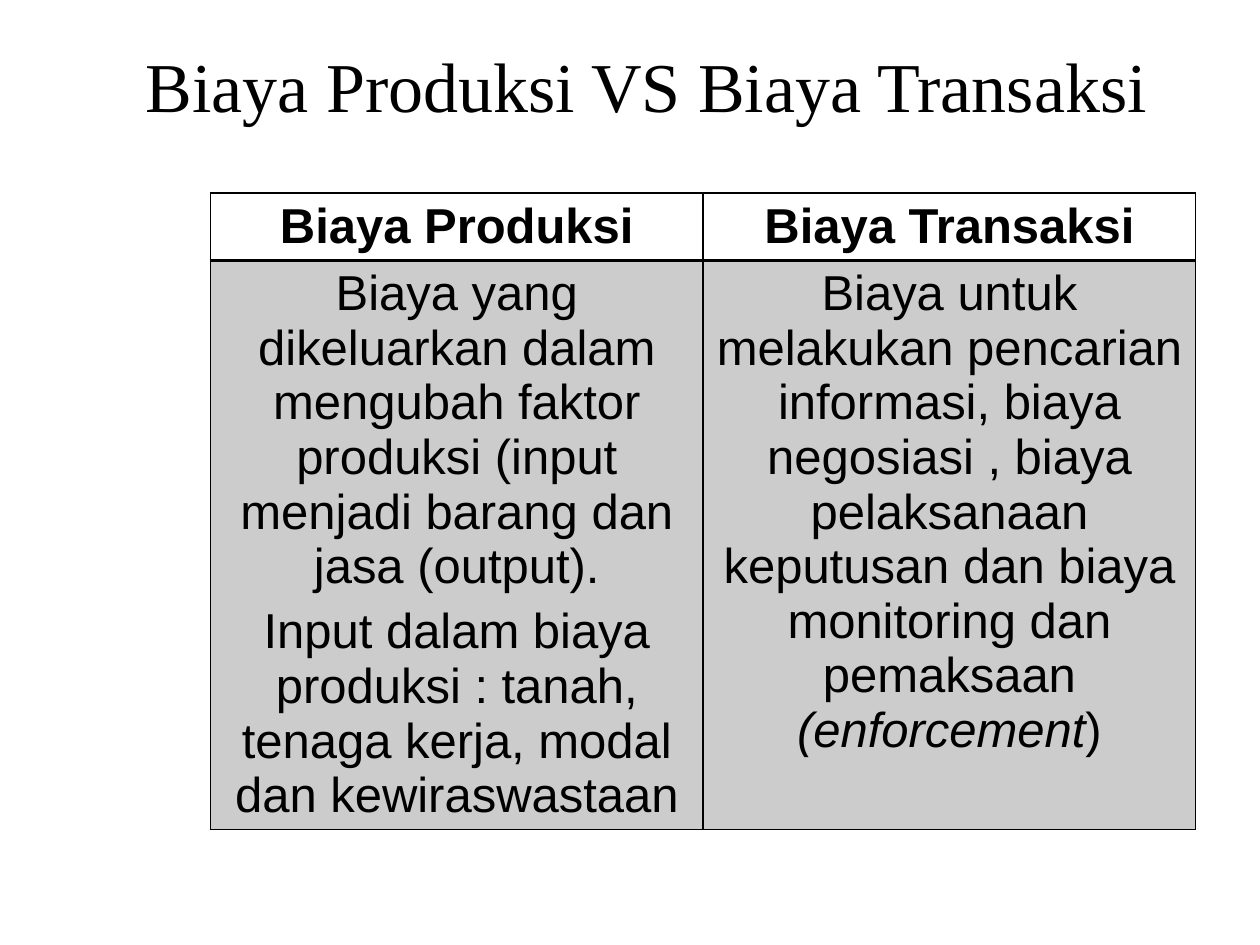
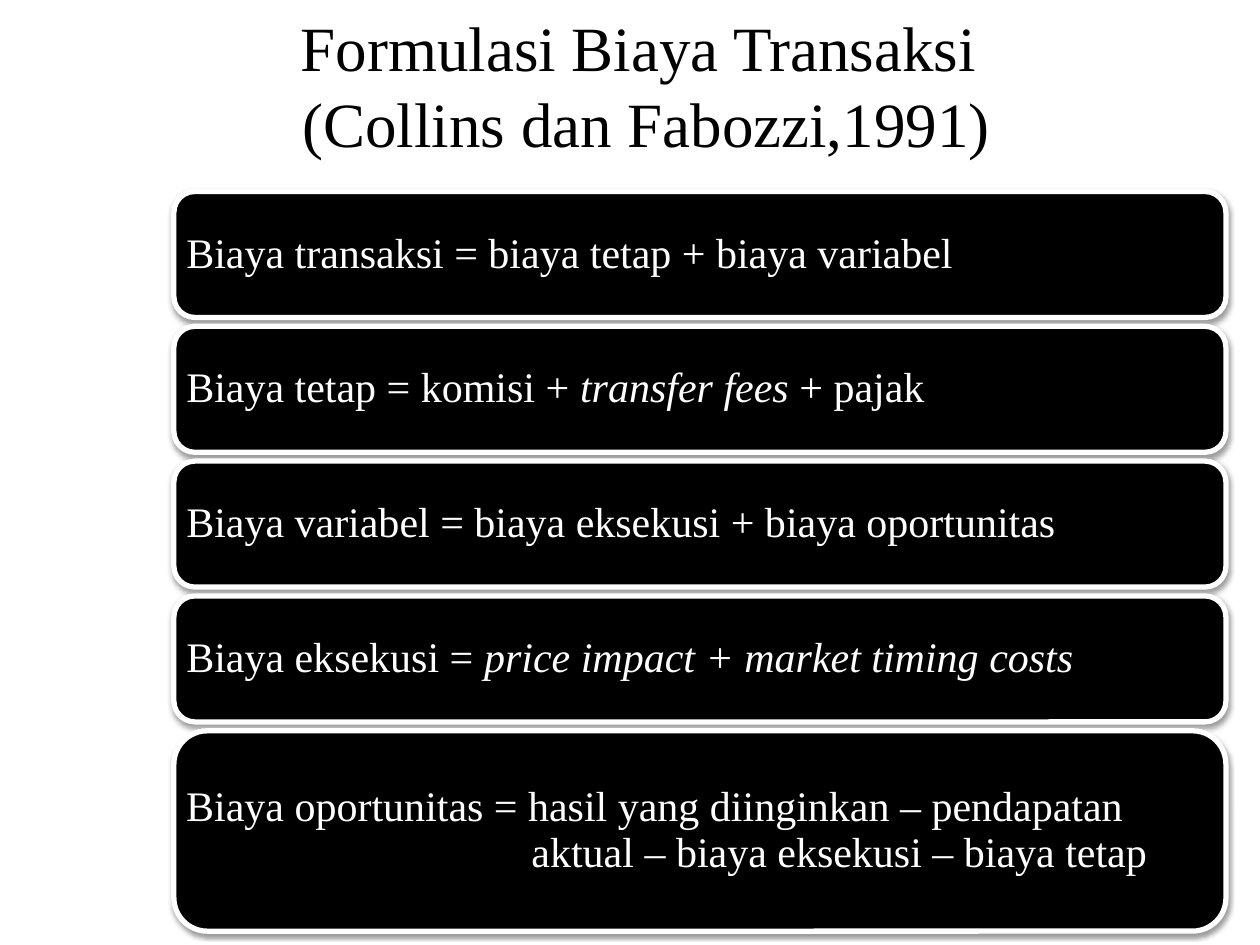
from lxml import etree
from pptx import Presentation
from pptx.dml.color import RGBColor
from pptx.enum.shapes import MSO_SHAPE
from pptx.enum.text import MSO_ANCHOR, MSO_AUTO_SIZE, PP_ALIGN
from pptx.oxml import parse_xml
from pptx.oxml.ns import nsdecls, qn
from pptx.util import Inches, Pt

ROUND = MSO_SHAPE.ROUNDED_RECTANGLE
MIDDLE = MSO_ANCHOR.MIDDLE
NO_FIT = MSO_AUTO_SIZE.NONE
LEFT, CENTER = PP_ALIGN.LEFT, PP_ALIGN.CENTER
BLACK, WHITE, GREY = "000000", "FFFFFF", "CCCCCC"
SERIF, SANS = "Times New Roman", "Arial"


def color(code):
    return RGBColor.from_string(code)


def write(frame, *texts, font=SERIF, size=24, ink=BLACK, bold=False,
          align=LEFT, line=1.0, after=0, hang=0):
    for i, text in enumerate(texts):
        para = frame.add_paragraph() if i else frame.paragraphs[0]
        para.alignment = align
        para.line_spacing = line
        para.space_after = Pt(after)
        if hang:
            props = para._p.get_or_add_pPr()
            props.set("marL", str(Inches(hang)))
            props.set("indent", str(-Inches(hang)))
        for j, part in enumerate(text.split("*")):
            for k, row in enumerate(part.split("\n")):
                if k:
                    para.add_line_break()
                if not row:
                    continue
                run = para.add_run()
                run.text = row
                style = run.font
                style.name, style.size = font, Pt(size)
                style.bold, style.italic = bold, j % 2 == 1
                style.color.rgb = color(ink)


class Deck:
    def __init__(self):
        self.show = Presentation()
        self.show.slide_width = Inches(10)
        self.show.slide_height = Inches(7.5)
        self.slide = None

    def page(self, text, size):
        self.slide = self.show.slides.add_slide(self.show.slide_layouts[5])
        title = self.slide.shapes.title
        title.left, title.top = Inches(0.92), Inches(0.17)
        title.width, title.height = Inches(8.42), Inches(1)
        frame = title.text_frame
        frame.word_wrap = True
        frame.auto_size = NO_FIT
        frame.vertical_anchor = MIDDLE
        write(frame, text, size=size, align=CENTER)

    def edge(self, cell, side, width):
        props = cell._tc.get_or_add_tcPr()
        line = etree.SubElement(props, qn("a:ln" + side), w=str(Pt(width)))
        fill = etree.SubElement(line, qn("a:solidFill"))
        etree.SubElement(fill, qn("a:srgbClr"), val=BLACK)

    def table(self, rows, left, top, width, heights):
        count = len(rows[0])
        frame = self.slide.shapes.add_table(
            len(rows), count, Inches(left), Inches(top),
            Inches(width), Inches(sum(heights)))
        grid = frame.table
        for col in grid.columns:
            col.width = Inches(width / count)
        for i, row in enumerate(rows):
            grid.rows[i].height = Inches(heights[i])
            head = i == 0
            for j, texts in enumerate(row):
                cell = grid.cell(i, j)
                for side in "LRTB":
                    thick = side == ("B" if head else "T")
                    self.edge(cell, side, 2 if thick else 1)
                cell.fill.solid()
                cell.fill.fore_color.rgb = color(WHITE if head else GREY)
                write(cell.text_frame, *texts, font=SANS, size=28,
                      bold=head, align=CENTER, after=0 if head else 6)

    def bar(self, text, top, height, hang=0):
        box = self.slide.shapes.add_shape(
            ROUND, Inches(1.38), Inches(top), Inches(8.35), Inches(height))
        box.fill.solid()
        box.fill.fore_color.rgb = color(BLACK)
        box.line.color.rgb = color(WHITE)
        box.line.width = Pt(3)
        self.shade(box)
        frame = box.text_frame
        frame.word_wrap = True
        frame.vertical_anchor = MIDDLE
        frame.margin_left = frame.margin_right = Inches(0.1 - 0.05 * height)
        write(frame, text, ink=WHITE, line=0.9, hang=hang)

    def shade(self, box):
        box.shadow.inherit = False
        box._element.spPr.find(qn("a:effectLst")).append(parse_xml(
            f'<a:outerShdw {nsdecls("a")} blurRad="{Pt(3.1)}" '
            f'dist="{Pt(1.6)}" dir="5400000" rotWithShape="0">'
            f'<a:srgbClr val="{BLACK}"><a:alpha val="38000"/></a:srgbClr>'
            '</a:outerShdw>'))


def main():
    deck = Deck()
    deck.page("Biaya Produksi VS Biaya Transaksi", 40)
    costs = [
        [["Biaya Produksi"], ["Biaya Transaksi"]],
        [["Biaya yang dikeluarkan dalam mengubah faktor produksi "
          "(input menjadi barang dan jasa (output).",
          "Input dalam biaya produksi : tanah, tenaga kerja, modal "
          "dan kewiraswastaan"],
         ["Biaya untuk melakukan pencarian informasi, biaya negosiasi , "
          "biaya pelaksanaan keputusan dan biaya monitoring dan "
          "pemaksaan *(enforcement*)"]],
    ]
    deck.table(costs, 1.67, 1.53, 7.82, [0.53, 4.52])

    deck.page("Formulasi Biaya Transaksi \n(Collins dan Fabozzi,1991)", 36)
    terms = [
        ("Biaya transaksi = biaya tetap + biaya variabel", 1, 0),
        ("Biaya tetap = komisi + *transfer fees *+ pajak", 1, 0),
        ("Biaya variabel = biaya eksekusi + biaya oportunitas", 1, 2.64),
        ("Biaya eksekusi = *price impact + market timing costs", 1, 0),
        ("Biaya oportunitas = hasil yang diinginkan – pendapatan aktual "
         "– biaya eksekusi – biaya tetap", 1.59, 2.74),
    ]
    top = 1.52
    for text, height, hang in terms:
        deck.bar(text, top, height, hang)
        top += height + 0.07
    deck.show.save("out.pptx")


if __name__ == "__main__":
    main()
